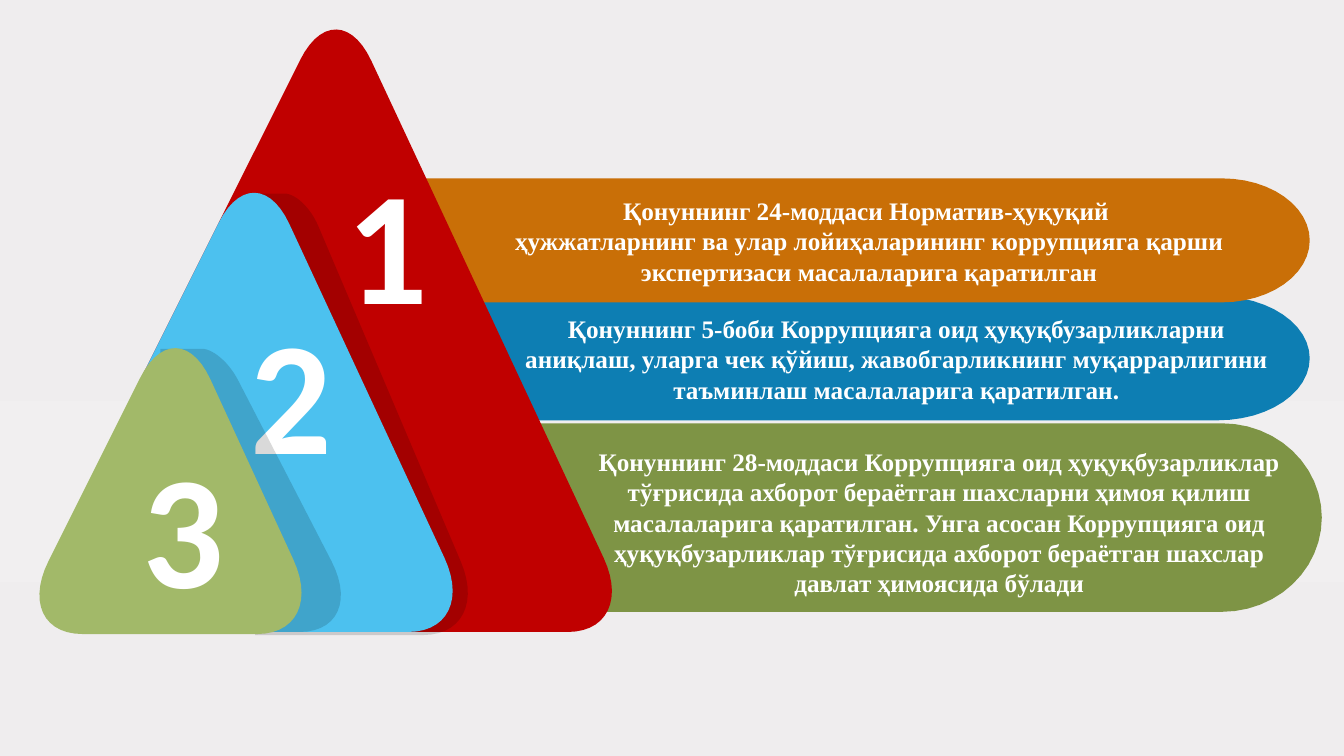
from copy import deepcopy
from math import cos, hypot, pi, sin

from pptx import Presentation
from pptx.dml.color import RGBColor
from pptx.enum.text import MSO_ANCHOR as Anchor, MSO_AUTO_SIZE as AutoSize, PP_ALIGN as Align
from pptx.oxml.ns import qn
from pptx.util import Inches, Pt

BACKGROUND = [(0, "EFEDEE"), (53, "F1EFF0"), (77, "EFEDEE"), (100, "EFEBEC")]

# Bars from back to front: box, slant of the left end, radius of the right end, colour
BARS = [
    ((3.92, 2.94, 9.07, 1.23), 1.2, 0.91, "0D7EB3"),
    ((2.9, 1.77, 10.09, 1.23), 1.42, 0.87, "C96F07"),
    ((4.5, 4.2, 8.61, 1.87), 1.4, 0.99, "7E9445"),
]

# Triangles from back to front: number, box, colour, number position, shadow.
# A shadow is left, top, bottom and the x of its right edge at top and bottom.
TRIANGLES = [
    ("1", (0.42, 0.3, 5.65, 5.97), "C00000", (3.33, 1.35), None),
    ("2", (0.42, 1.92, 4.07, 4.35), "4CC1EF", (2.38, 2.84), (2.53, 1.92, 6.3, 3.02, 4.88)),
    ("3", (0.4, 3.46, 2.59, 2.83), "A2B969", (1.31, 4.17), (1.59, 3.46, 6.27, 2.2, 3.65)),
]

CAPTIONS = [
    ((4.42, 1.89, 8.4, 1.01), [
        "Қонуннинг 24-моддаси Норматив-ҳуқуқий ",
        "ҳужжатларнинг ва улар лойиҳаларининг коррупцияга қарши "
        "экспертизаси масалаларига қаратилган"]),
    ((4.98, 3.06, 7.82, 1.01), [
        "Қонуннинг 5-боби Коррупцияга оид ҳуқуқбузарликларни аниқлаш, уларга чек қўйиш, "
        "жавобгарликнинг муқаррарлигини таъминлаш масалаларига қаратилган."]),
    ((5.6, 4.38, 7.43, 1.62), [
        "Қонуннинг 28-моддаси Коррупцияга оид ҳуқуқбузарликлар тўғрисида ахборот бераётган "
        "шахсларни ҳимоя қилиш масалаларига қаратилган. Унга асосан Коррупцияга оид "
        "ҳуқуқбузарликлар тўғрисида ахборот бераётган шахслар давлат ҳимоясида бўлади"]),
]


def color(hex_text):
    return RGBColor.from_string(hex_text)


def set_background(page):
    fill = page.background.fill
    fill.gradient()
    fill.gradient_angle = 270
    stop_list = next(page.background._cSld.iter(qn("a:gsLst")))
    for _ in BACKGROUND[2:]:
        stop_list.append(deepcopy(stop_list[0]))
    for stop, (percent, shade) in zip(fill.gradient_stops, BACKGROUND):
        stop.position = percent / 100
        stop.color.rgb = color(shade)


def add_outline(page, points, shade, opacity=100):
    points = [(Inches(x), Inches(y)) for x, y in points]
    builder = page.shapes.build_freeform(*points[0], scale=1.0)
    builder.add_line_segments(points[1:], close=True)
    shape = builder.convert_to_shape()
    shape.shadow.inherit = False
    shape.line.fill.background()
    shape.fill.solid()
    shape.fill.fore_color.rgb = color(shade)
    if opacity < 100:
        tint = next(shape._element.spPr.iter(qn("a:srgbClr")))
        tint.makeelement(qn("a:alpha"), {})
        alpha = tint.makeelement(qn("a:alpha"), {"val": str(opacity * 1000)})
        tint.append(alpha)
    return shape


def toward(start, end, distance):
    share = distance / hypot(end[0] - start[0], end[1] - start[1])
    return tuple(a + (b - a) * share for a, b in zip(start, end))


def round_corners(corners, steps=14):
    """Turn (x, y, cut before, cut after) corners into a smooth outline."""
    outline = []
    for index, (x, y, before, after) in enumerate(corners):
        corner = (x, y)
        if not before:
            outline.append(corner)
            continue
        start = toward(corner, corners[index - 1][:2], before)
        end = toward(corner, corners[(index + 1) % len(corners)][:2], after)
        # Handles reach 56 % of the way to the corner, as in a circle
        pull_start, pull_end = (
            tuple(a + 0.56 * (b - a) for a, b in zip(point, corner)) for point in (start, end))
        for step in range(steps + 1):
            t = step / steps
            weights = ((1 - t) ** 3, 3 * t * (1 - t) ** 2, 3 * t * t * (1 - t), t ** 3)
            curve = (start, pull_start, pull_end, end)
            outline.append(tuple(
                sum(w * point[axis] for w, point in zip(weights, curve)) for axis in (0, 1)))
    return outline


def add_text(page, box, paragraphs, font_name, size):
    text_box = page.shapes.add_textbox(*map(Inches, box))
    frame = text_box.text_frame
    frame.word_wrap = True
    for index, text in enumerate(paragraphs):
        para = frame.paragraphs[0] if index == 0 else frame.add_paragraph()
        para.alignment = Align.CENTER
        run = para.add_run()
        run.text = text
        run.font.name = font_name
        run.font.size = Pt(size)
        run.font.bold = True
        run.font.color.rgb = color("FFFFFF")
    frame.auto_size = AutoSize.SHAPE_TO_FIT_TEXT
    return frame


def add_bar(page, box, slant, radius, shade, steps=24):
    left, top, width, height = box
    center_x, center_y = left + width - radius, top + height / 2
    angles = [pi * (step / steps - 0.5) for step in range(steps + 1)]
    end_cap = [(center_x + radius * cos(a), center_y + height / 2 * sin(a)) for a in angles]
    add_outline(page, [(left, top), *end_cap, (left + slant, top + height)], shade)


def add_shadow(page, left, top, bottom, right_top, right_bottom):
    corners = [(left, top, 0, 0), (right_top, top, 0.2, 0.35),
               (right_bottom, bottom, 0.79, 0.68), (left, bottom, 0, 0)]
    add_outline(page, round_corners(corners), "000000", opacity=15)


def add_triangle(page, number, box, shade, number_at, shadow):
    if shadow:
        add_shadow(page, *shadow)
    # Sharp corners lie outside the box; the left side rises two to one
    left, top, width, height = box
    bottom, apex_y = top + height, top - 0.43
    sharp_left, sharp_right = left - 0.28, left + width + 0.26
    apex_x = sharp_left + (bottom - apex_y) / 2
    corners = [(apex_x, apex_y, 0.81, 0.81), (sharp_right, bottom, 0.81, 0.7),
               (sharp_left, bottom, 0.7, 0.81)]
    add_outline(page, round_corners(corners), shade)
    frame = add_text(page, (*number_at, 1.02, 2.04), [number], "Calibri", 115)
    frame.word_wrap = False
    frame.vertical_anchor = Anchor.BOTTOM


def main():
    deck = Presentation()
    deck.slide_width, deck.slide_height = Inches(13.33), Inches(7.5)
    page = deck.slides.add_slide(deck.slide_layouts[6])
    set_background(page)
    for bar in BARS:
        add_bar(page, *bar)
    for triangle in TRIANGLES:
        add_triangle(page, *triangle)
    for box, paragraphs in CAPTIONS:
        add_text(page, box, paragraphs, "Times New Roman", 18)
    deck.save("out.pptx")


if __name__ == "__main__":
    main()
